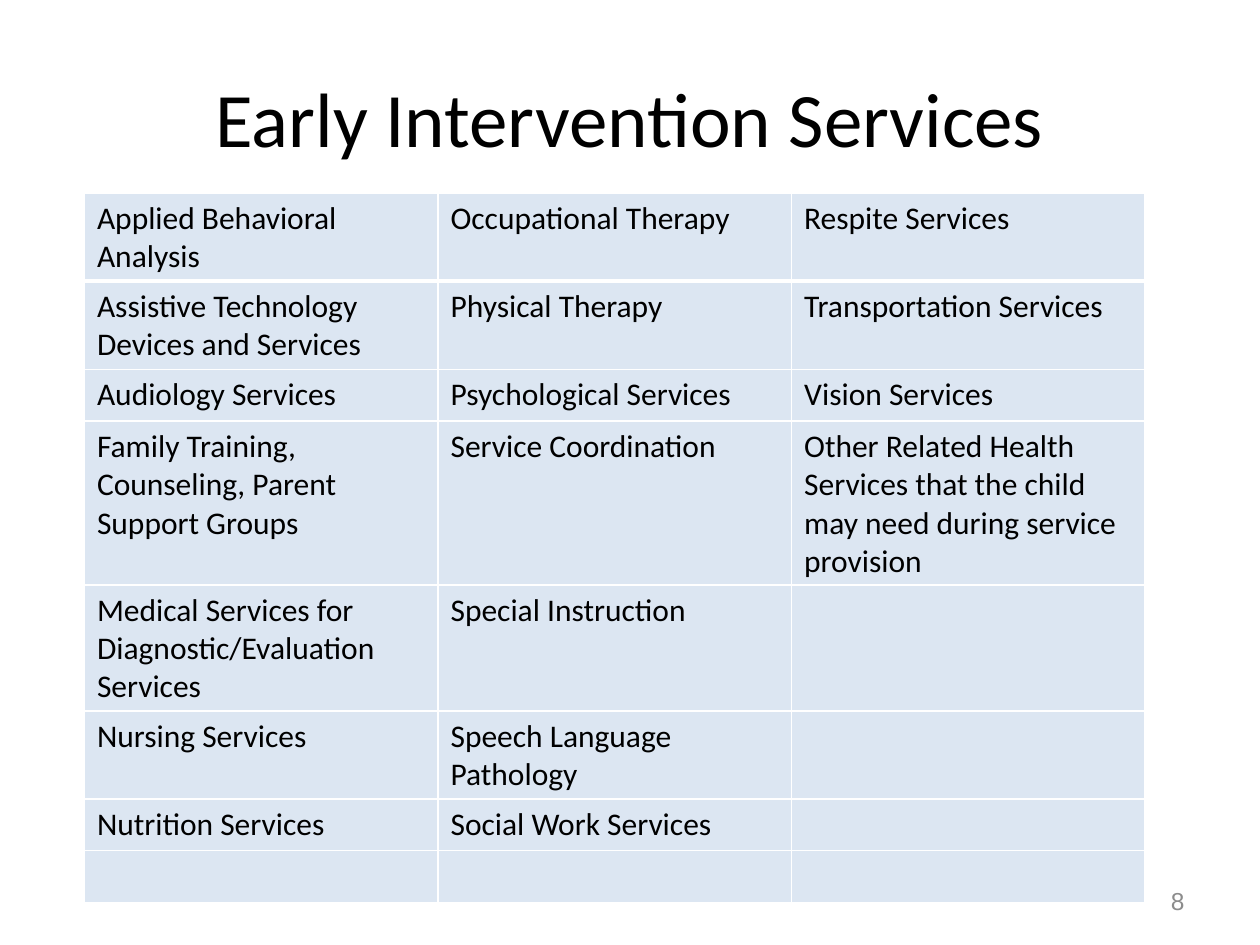
import pptx
import pptx.dml.color
import pptx.enum.text
import pptx.oxml.ns
import pptx.util
from lxml import etree

COLORS = {"text": "000000", "number": "8C8C8C", "cell": "DCE6F2", "border": "FFFFFF"}
WIDTH, HEIGHT = 10, 7.5

SERVICES = [
    ["Applied Behavioral Analysis", "Occupational Therapy", "Respite Services"],
    ["Assistive Technology Devices and Services", "Physical Therapy", "Transportation Services"],
    ["Audiology Services", "Psychological Services", "Vision Services"],
    ["Family Training, Counseling, Parent Support Groups", "Service Coordination",
     "Other Related Health Services that the child may need during service provision"],
    ["Medical Services for Diagnostic/Evaluation Services", "Special Instruction", ""],
    ["Nursing Services", "Speech Language Pathology", ""],
    ["Nutrition Services", "Social Work Services", ""],
    ["", "", ""],
]


def color(name):
    return pptx.dml.color.RGBColor.from_string(COLORS[name])


class SlideBuilder:
    """Holds the style and the current page; places are shares of the slide's size."""

    def __init__(self, deck):
        self.page = deck.slides.add_slide(deck.slide_layouts[6])
        self.font = "Calibri"
        self.body_size = 18

    def place(self, left, top, width, height):
        shares = (left * WIDTH, top * HEIGHT, width * WIDTH, height * HEIGHT)
        return [pptx.util.Inches(length) for length in shares]

    def style(self, font, size, name, face=None):
        font.name = face or self.font
        font.size = pptx.util.Pt(size)
        font.color.rgb = color(name)

    def text(self, words, area, size, name, align, face=None):
        frame = self.page.shapes.add_textbox(*self.place(*area)).text_frame
        frame.word_wrap = True
        frame.vertical_anchor = pptx.enum.text.MSO_ANCHOR.MIDDLE
        frame.text = words
        paragraph = frame.paragraphs[0]
        paragraph.alignment = align
        self.style(paragraph.runs[0].font, size, name, face)

    def borders(self, cell, widths):
        """Draw the sides of a cell; widths maps L, R, T and B, in that order, to points."""
        properties = cell._tc.get_or_add_tcPr()
        qn = pptx.oxml.ns.qn
        for side, points in widths.items():
            line = etree.SubElement(properties, qn(f"a:ln{side}"), w=str(pptx.util.Pt(points)))
            fill = etree.SubElement(line, qn("a:solidFill"))
            etree.SubElement(fill, qn("a:srgbClr"), val=COLORS["border"])

    def table(self, rows, area, first_rule=3, rule=1):
        """Fill a table whose first row is set off by a thicker rule."""
        shape = self.page.shapes.add_table(len(rows), len(rows[0]), *self.place(*area))
        for r, row in enumerate(rows):
            for c, words in enumerate(row):
                cell = shape.table.cell(r, c)
                cell.text = words
                self.style(cell.text_frame.paragraphs[0].font, self.body_size, "text")
                for span in cell.text_frame.paragraphs[0].runs:
                    self.style(span.font, self.body_size, "text")
                self.borders(cell, {"L": rule, "R": rule,
                                    "T": first_rule if r == 1 else rule,
                                    "B": first_rule if r == 0 else rule})
                cell.fill.solid()
                cell.fill.fore_color.rgb = color("cell")


def main():
    deck = pptx.Presentation()
    deck.slide_width = pptx.util.Inches(WIDTH)
    deck.slide_height = pptx.util.Inches(HEIGHT)
    align = pptx.enum.text.PP_ALIGN

    slide = SlideBuilder(deck)
    slide.text("Early Intervention Services", (0.05, 0.04, 0.9, 1 / 6), 44, "text", align.CENTER)
    slide.text("8", (0.717, 0.927, 0.233, 0.053), 14, "number", align.RIGHT, "Arial")
    row_height = 0.41 / HEIGHT
    slide.table(SERVICES, (0.067, 0.204, 0.842, row_height * len(SERVICES)))
    deck.save("out.pptx")


if __name__ == "__main__":
    main()
